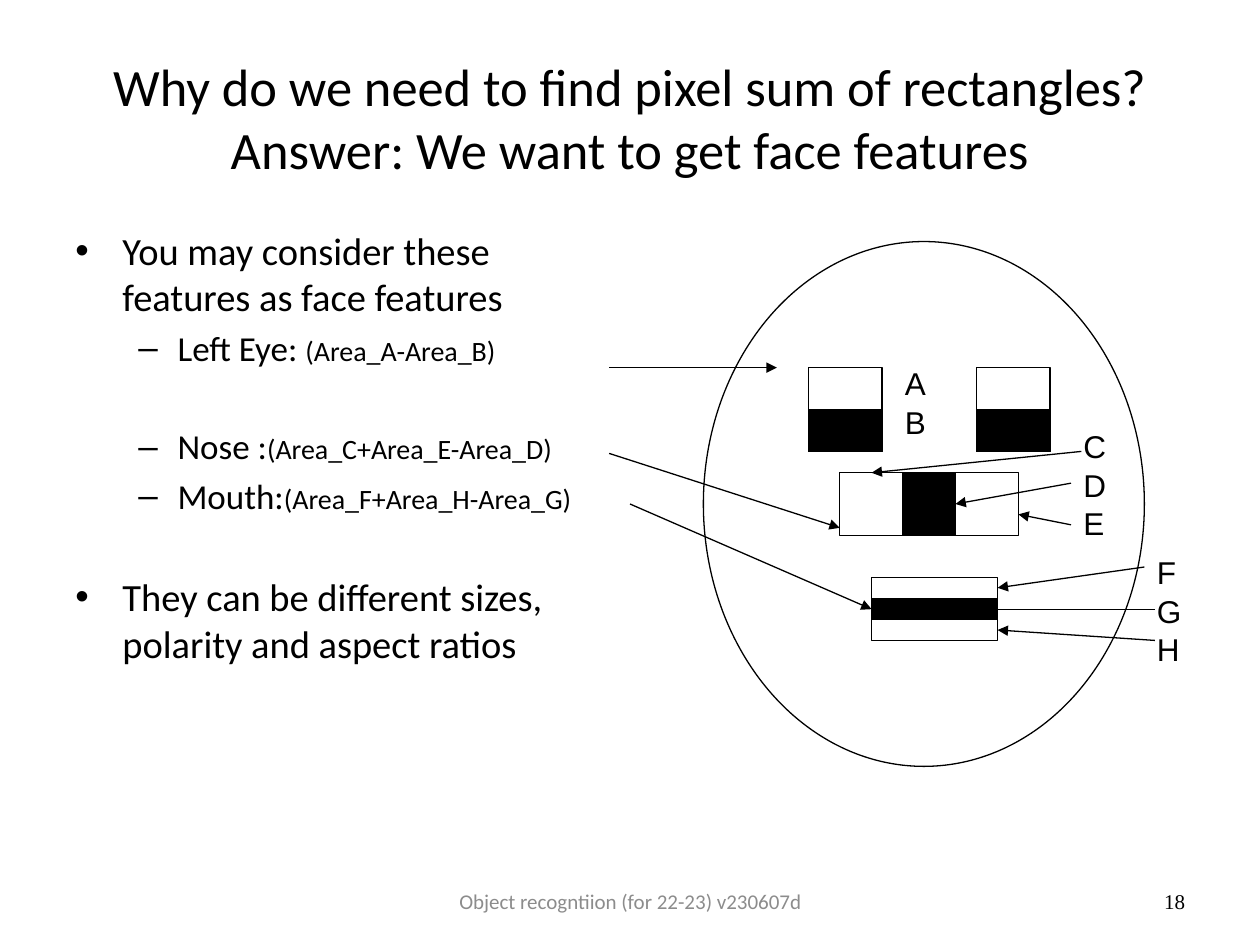
from lxml import etree
from pptx import Presentation
from pptx.dml.color import RGBColor
from pptx.enum.shapes import MSO_CONNECTOR, MSO_SHAPE
from pptx.enum.text import MSO_ANCHOR, PP_ALIGN
from pptx.oxml.ns import qn
from pptx.util import Cm, Pt

RECTANGLE, OVAL = MSO_SHAPE.RECTANGLE, MSO_SHAPE.OVAL
STRAIGHT = MSO_CONNECTOR.STRAIGHT
LEFT, CENTER, RIGHT = PP_ALIGN.LEFT, PP_ALIGN.CENTER, PP_ALIGN.RIGHT
TOP, MIDDLE = MSO_ANCHOR.TOP, MSO_ANCHOR.MIDDLE
BLACK, GRAY = "000000", "8C8C8C"
LINE_WIDTH = Pt(0.75)

BULLETS = [
    (0, 4.4, [("You may consider these features as face features", 22)]),
    (1, 4, [("Left Eye: ", 20), ("(Area_A-Area_B)", 16)]),
    (1, 32.4, [("Nose :", 20), ("(Area_C+Area_E-Area_D)", 16)]),
    (1, 4, [("Mouth:", 20), ("(Area_F+Area_H-Area_G)", 16)]),
    (0, 32.8, [("They can be different sizes, polarity and aspect ratios", 22)]),
]
BULLET_LEVELS = [("•", 0.95, 0.95), ("–", 2.06, 0.79)]

NOSE = [(16.93, 9.53, 3.6, 1.27), (18.2, 9.53, 1.06, 1.27)]
MOUTH = [(17.57, 11.64, 2.54, 1.27), (17.57, 12.07, 2.54, 0.42)]
EYES = [
    [(left, 7.41, 1.48, 1.69), (left, 8.25, 1.48, 0.85)] for left in (16.3, 19.69)
]
FACE = (14.18, 4.87, 8.89, 10.58)

ARROWS = [
    (12.28, 9.14, 16.93, 10.64),
    (12.28, 7.41, 15.66, 7.41),
    (12.7, 10.16, 17.57, 12.28),
    (21.8, 9.1, 17.57, 9.53),
    (21.59, 9.74, 19.26, 10.16),
    (21.59, 10.58, 20.53, 10.37),
    (23.07, 11.43, 20.11, 11.85),
    (23.28, 12.28, 19.47, 12.28),
    (23.28, 12.91, 20.11, 12.7),
]
AREA_LABELS = [
    ("ABC"[:2], (17.99, 7.2, 0.94, 1.78)),
    ("CDE", (21.59, 8.47, 0.97, 4.06)),
    ("FGH", (23.07, 11.01, 1.02, 4.06)),
]


def color(value):
    """Return the colour of a hex string."""
    return RGBColor.from_string(value)


def lengths(values):
    """Turn centimetre values into lengths."""
    return [Cm(value) for value in values]


def apply_format(target, values):
    """Set each attribute named in a dict of format values."""
    for name, value in values.items():
        setattr(target, name, value)


def add_box(page, place, anchor=TOP, wrap=True):
    """Add an empty text box and return its text frame."""
    frame = page.shapes.add_textbox(*lengths(place)).text_frame
    apply_format(frame, {"word_wrap": wrap, "vertical_anchor": anchor})
    return frame


def add_span(para, text, size, font="Calibri", ink=BLACK):
    """Add one formatted run to a paragraph."""
    span = para.add_run()
    span.text = text
    apply_format(span.font, {"size": Pt(size), "name": font})
    span.font.color.rgb = color(ink)


def add_line_text(page, place, text, size, align, font="Calibri", ink=BLACK):
    """Add a vertically centred text, with a line break at each newline."""
    para = add_box(page, place, MIDDLE).paragraphs[0]
    para.alignment = align
    for number, line in enumerate(text.split("\n")):
        if number:
            para.add_line_break()
        add_span(para, line, size, font, ink)


def next_para(frame, number):
    """Return the first paragraph of a frame, or a new one after it."""
    return frame.add_paragraph() if number else frame.paragraphs[0]


def add_bullets(page, place):
    """Add the two-level bullet list."""
    frame = add_box(page, place)
    for number, (level, gap, spans) in enumerate(BULLETS):
        para = next_para(frame, number)
        mark, margin, hanging = BULLET_LEVELS[level]
        apply_format(para, {"level": level, "space_before": Pt(gap), "alignment": LEFT})
        properties = para._p.get_or_add_pPr()
        properties.set("marL", str(Cm(margin)))
        properties.set("indent", str(-Cm(hanging)))
        etree.SubElement(properties, qn("a:buFont"), typeface="Arial")
        etree.SubElement(properties, qn("a:buChar"), char=mark)
        for text, size in spans:
            add_span(para, text, size)


def add_area_labels(page, letters, place):
    """Add a column of area letters."""
    frame = add_box(page, place, wrap=False)
    for number, letter in enumerate(letters):
        para = next_para(frame, number)
        para.line_spacing = Pt(22)
        add_span(para, letter, 18, "Arial")


def add_outline(page, kind, place, fill=None):
    """Add a thin-lined shape, filled only if a colour is given."""
    shape = page.shapes.add_shape(kind, *lengths(place))
    shape.shadow.inherit = False
    if fill:
        shape.fill.solid()
        shape.fill.fore_color.rgb = color(fill)
    else:
        shape.fill.background()
    shape.line.color.rgb = color(BLACK)
    shape.line.width = LINE_WIDTH


def add_feature(page, outer, band):
    """Add a feature rectangle with its black band."""
    add_outline(page, RECTANGLE, outer)
    add_outline(page, RECTANGLE, band, BLACK)


def add_arrow(page, ends):
    """Add a straight arrow pointing at its second end."""
    arrow = page.shapes.add_connector(STRAIGHT, *lengths(ends))
    arrow.line.color.rgb = color(BLACK)
    arrow.line.width = LINE_WIDTH
    etree.SubElement(arrow.line._get_or_add_ln(), qn("a:tailEnd"), type="triangle")
    etree.SubElement(arrow._element.spPr, qn("a:effectLst"))


def main():
    """Build the slide and save it."""
    deck = Presentation()
    apply_format(deck, {"slide_width": Cm(25.4), "slide_height": Cm(19.05)})
    page = deck.slides.add_slide(deck.slide_layouts[6])
    title = (
        "Why do we need to find pixel sum of rectangles?\n"
        "Answer: We want to get face features"
    )
    add_line_text(page, (1.27, 0.76, 22.86, 3.18), title, 30, CENTER)
    add_bullets(page, (1.27, 4.45, 11.22, 12.57))
    footer = "Object recogntiion (for 22-23) v230607d"
    add_line_text(page, (8.69, 17.65, 8.04, 1.02), footer, 12, CENTER, ink=GRAY)
    add_line_text(
        page, (18.21, 17.65, 5.93, 1.02), "18", 12, RIGHT, "Times New Roman"
    )
    for outer, band in [NOSE, MOUTH, *EYES]:
        add_feature(page, outer, band)
    add_outline(page, OVAL, FACE)
    for ends in ARROWS:
        add_arrow(page, ends)
    for letters, place in AREA_LABELS:
        add_area_labels(page, letters, place)
    deck.save("out.pptx")


if __name__ == "__main__":
    main()
